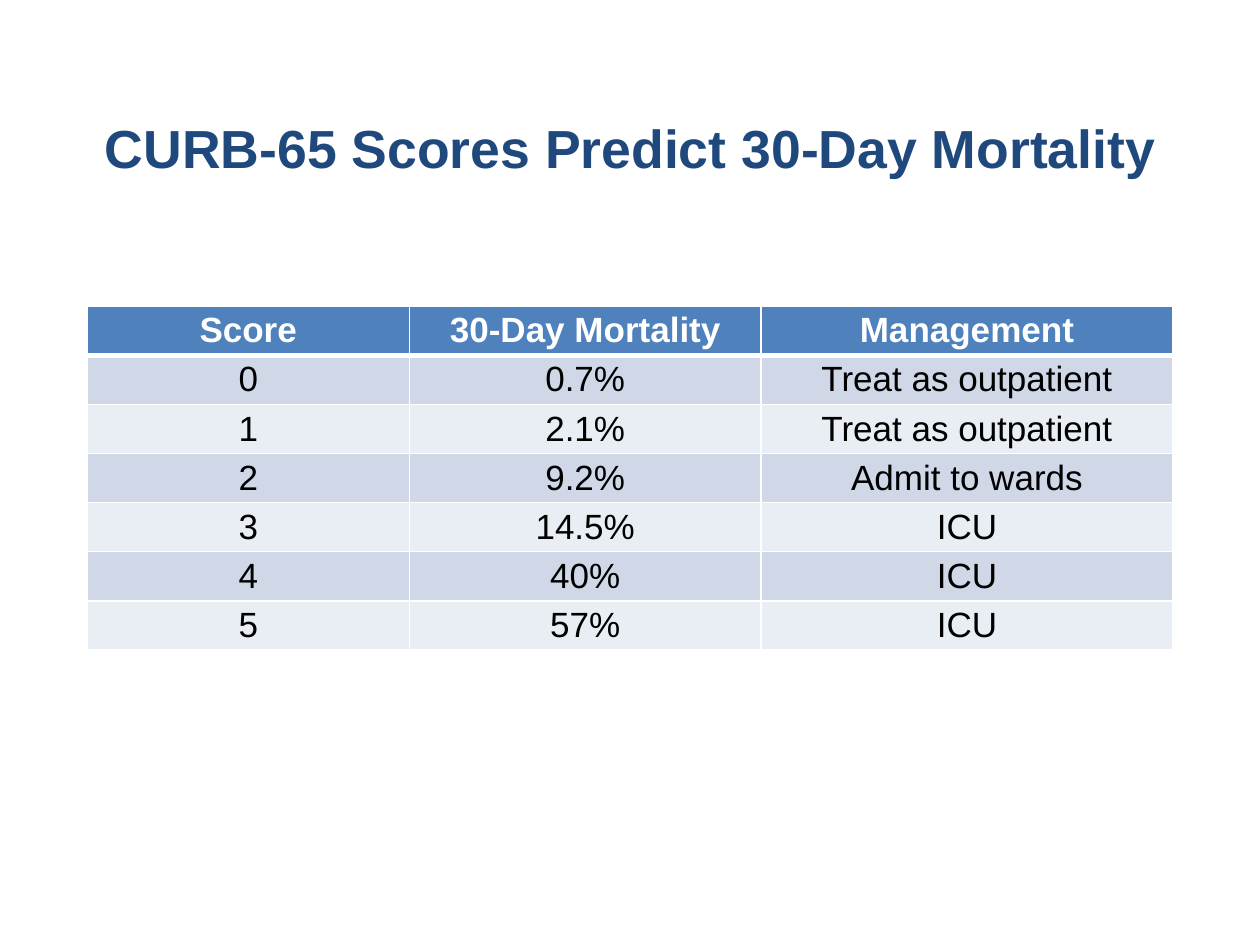
import lxml.etree
import pptx
import pptx.dml.color
import pptx.enum.text
import pptx.oxml.ns
import pptx.util
from pptx.util import Inches

FONT = "Arial"
COLUMN_WIDTHS = (2.56, 2.79, 3.27)
ROW_HEIGHT = 0.38
ROWS = (
    ("Score", "30-Day Mortality", "Management"),
    ("0", "0.7%", "Treat as outpatient"),
    ("1", "2.1%", "Treat as outpatient"),
    ("2", "9.2%", "Admit to wards"),
    ("3", "14.5%", "ICU"),
    ("4", "40%", "ICU"),
    ("5", "57%", "ICU"),
)
HEADER_FILL = "4F81BD"
BAND_FILLS = ("E9EDF4", "D0D8E8")
BORDER_COLOR = "FFFFFF"


def color(value):
    """Return the colour for a hex string."""
    return pptx.dml.color.RGBColor.from_string(value)


def write_text(text_frame, text, size, hex_color, bold):
    """Write one centred run into a text frame."""
    paragraph = text_frame.paragraphs[0]
    paragraph.alignment = pptx.enum.text.PP_ALIGN.CENTER
    run = paragraph.add_run()
    run.text = text
    run.font.name = FONT
    run.font.size = pptx.util.Pt(size)
    run.font.bold = bold
    run.font.color.rgb = color(hex_color)


def set_borders(cell, **widths):
    """Give a cell solid borders with widths in points by side."""
    qualified = pptx.oxml.ns.qn
    properties = cell._tc.get_or_add_tcPr()
    for side, width in widths.items():
        line = lxml.etree.SubElement(
            properties, qualified(f"a:ln{side}"), w=str(pptx.util.Pt(width)))
        fill = lxml.etree.SubElement(line, qualified("a:solidFill"))
        lxml.etree.SubElement(fill, qualified("a:srgbClr"), val=BORDER_COLOR)


def add_title(slide, text):
    """Place and fill the title placeholder."""
    title = slide.shapes.title
    title.left, title.top = Inches(0.5), Inches(0.83)
    title.width, title.height = Inches(9), Inches(0.68)
    title.text_frame.word_wrap = True
    title.text_frame.vertical_anchor = pptx.enum.text.MSO_ANCHOR.MIDDLE
    write_text(title.text_frame, text, 30.6, "1F497D", True)


def format_cell(cell, text, row_index):
    """Fill one cell with text, borders and its band colour."""
    is_header = row_index == 0
    cell.margin_left = cell.margin_right = Inches(0.1)
    cell.margin_top = cell.margin_bottom = Inches(0.04)
    set_borders(cell, L=1, R=1, T=3 if row_index == 1 else 1, B=3 if is_header else 1)
    cell.fill.solid()
    cell.fill.fore_color.rgb = color(HEADER_FILL if is_header else BAND_FILLS[row_index % 2])
    write_text(cell.text_frame, text, 20, "FFFFFF" if is_header else "000000", is_header)


def add_score_table(slide):
    """Add the table of scores, mortality and management."""
    frame = slide.shapes.add_table(
        len(ROWS), len(COLUMN_WIDTHS), Inches(0.69), Inches(2.43),
        Inches(sum(COLUMN_WIDTHS)), Inches(ROW_HEIGHT * len(ROWS)))
    table = frame.table
    for column, width in zip(table.columns, COLUMN_WIDTHS):
        column.width = Inches(width)
    for row_index, texts in enumerate(ROWS):
        table.rows[row_index].height = Inches(ROW_HEIGHT)
        for column_index, text in enumerate(texts):
            format_cell(table.cell(row_index, column_index), text, row_index)


def main():
    """Build and save the slide."""
    presentation = pptx.Presentation()
    presentation.slide_width = Inches(10)
    presentation.slide_height = Inches(7.5)
    slide = presentation.slides.add_slide(presentation.slide_layouts[5])
    add_title(slide, "CURB-65 Scores Predict 30-Day Mortality")
    add_score_table(slide)
    presentation.save("out.pptx")


if __name__ == "__main__":
    main()
